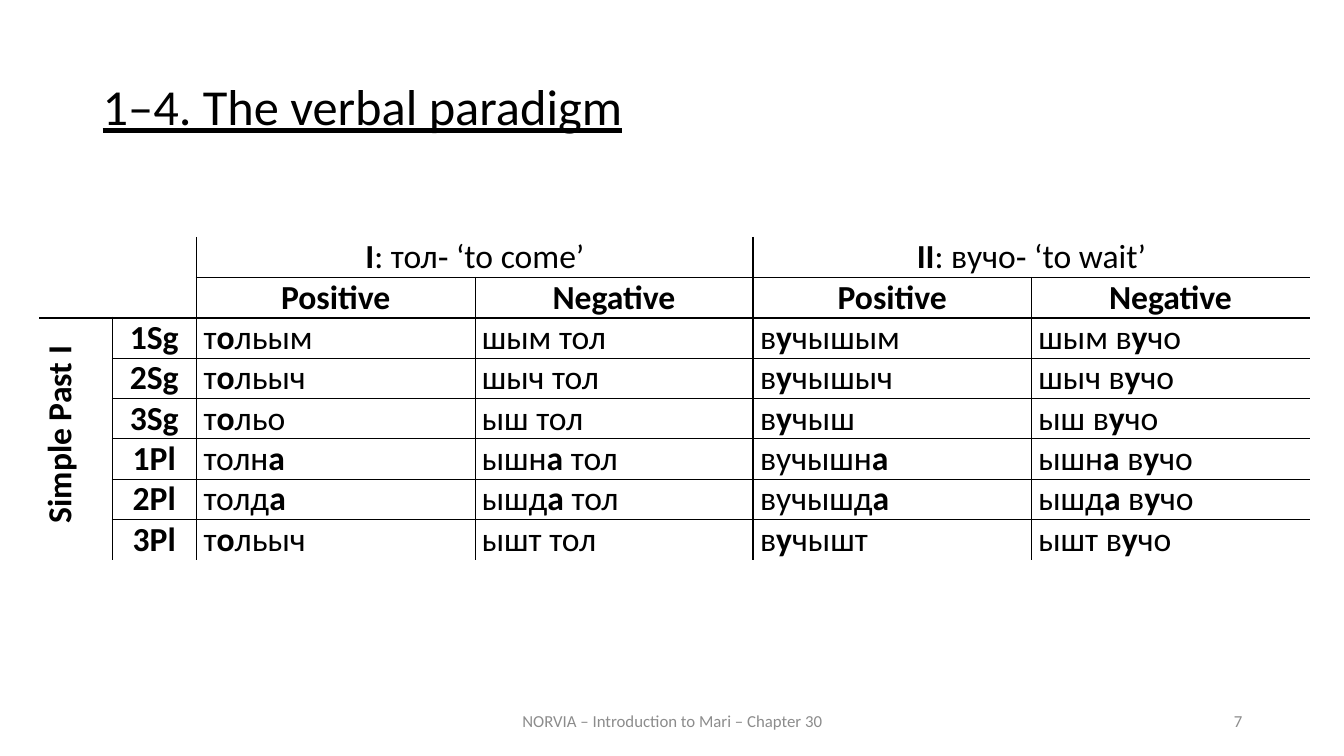
import dataclasses

import pptx
import pptx.dml.color
import pptx.enum.text
import pptx.oxml.ns
import pptx.util
from lxml import etree

ALIGN = pptx.enum.text.PP_ALIGN
ANCHOR = pptx.enum.text.MSO_ANCHOR
INCH = pptx.util.Inches


@dataclasses.dataclass(frozen=True)
class Theme:
    font: str = "Calibri"
    ink: str = "000000"
    muted: str = "8C8C8C"
    title_size: float = 36
    table_size: float = 24
    footer_size: float = 12
    thin: float = 0.5
    thick: float = 1.5


THEME = Theme()
SLIDE_WIDTH, SLIDE_HEIGHT = 13.33, 7.5

COLUMN_WIDTHS = [0.72, 0.84] + [2.76] * 4
ROW_HEIGHT = 0.4
CONJUGATIONS = ["*I*: тол‑ ‘to come’", "*II*: вучо‑ ‘to wait’"]
POLARITIES = ["*Positive*", "*Negative*"]
TENSE = "*Simple Past I*"
FORMS = [
    ["*1Sg*", "т*о*льым", "шым тол", "в*у*чышым", "шым в*у*чо"],
    ["*2Sg*", "т*о*льыч", "шыч тол", "в*у*чышыч", "шыч в*у*чо"],
    ["*3Sg*", "т*о*льо", "ыш тол", "в*у*чыш", "ыш в*у*чо"],
    ["*1Pl*", "толн*а*", "ышн*а* тол", "вучышн*а*", "ышн*а* в*у*чо"],
    ["*2Pl*", "толд*а*", "ышд*а* тол", "вучышд*а*", "ышд*а* в*у*чо"],
    ["*3Pl*", "т*о*льыч", "ышт тол", "в*у*чышт", "ышт в*у*чо"],
]
HEADER_ROWS = 2
LABEL_COLUMNS = 2


def write(paragraph, marked, size, color, align, underline=None):
    paragraph.alignment = align
    for index, piece in enumerate(marked.split("*")):
        if piece:
            run = paragraph.add_run()
            run.text = piece
            run.font.name = THEME.font
            run.font.size = pptx.util.Pt(size)
            run.font.bold = index % 2 == 1
            run.font.underline = underline
            run.font.color.rgb = pptx.dml.color.RGBColor.from_string(color)


def add_text(slide, box, text, size, color, align, anchor, underline=None):
    frame = slide.shapes.add_textbox(*map(INCH, box)).text_frame
    frame.word_wrap = True
    frame.vertical_anchor = anchor
    write(frame.paragraphs[0], text, size, color, align, underline)
    return frame.paragraphs[0]


def add_title(slide, box):
    heading = add_text(slide, box, "1–4. The verbal paradigm", THEME.title_size,
                       THEME.ink, ALIGN.JUSTIFY, ANCHOR.TOP, True)
    heading.line_spacing = 0.9
    heading.space_before = pptx.util.Pt(12)


def add_footer(slide, box):
    left, top, width, height = box
    number_width = 3
    add_text(slide, (left, top, 4.5, height), "NORVIA – Introduction to Mari – Chapter 30",
             THEME.footer_size, THEME.muted, ALIGN.CENTER, ANCHOR.MIDDLE)
    add_text(slide, (left + width - number_width, top, number_width, height), "7",
             THEME.footer_size, THEME.muted, ALIGN.RIGHT, ANCHOR.MIDDLE)


def vertical_rule(edge, row):
    if edge in (2, 4):
        return THEME.thick
    first_row = {1: HEADER_ROWS, 3: 1, 5: 1}.get(edge)
    return THEME.thin if first_row is not None and row >= first_row else 0


def horizontal_rule(edge, column):
    if edge == HEADER_ROWS:
        return THEME.thick
    if edge in (0, HEADER_ROWS + len(FORMS)):
        return 0
    first_column = LABEL_COLUMNS if edge < HEADER_ROWS else 1
    return THEME.thin if column >= first_column else 0


def draw_border(cell, side, weight):
    qn = pptx.oxml.ns.qn
    line = etree.SubElement(cell._tc.get_or_add_tcPr(), qn("a:ln" + side))
    line.set("w", str(int(pptx.util.Pt(weight))))
    if weight:
        ink = etree.SubElement(line, qn("a:solidFill"))
        etree.SubElement(ink, qn("a:srgbClr")).set("val", THEME.ink)
    else:
        etree.SubElement(line, qn("a:noFill"))


def style_cell(cell, row, column):
    right = column + (cell.span_width if cell.is_merge_origin else 1)
    bottom = row + (cell.span_height if cell.is_merge_origin else 1)
    draw_border(cell, "L", vertical_rule(column, row))
    draw_border(cell, "R", vertical_rule(right, row))
    draw_border(cell, "T", horizontal_rule(row, column))
    draw_border(cell, "B", horizontal_rule(bottom, column))
    cell.fill.background()
    cell.margin_left = cell.margin_right = INCH(0.07)
    cell.margin_top = cell.margin_bottom = 0


def add_paradigm(slide, box):
    row_count = HEADER_ROWS + len(FORMS)
    table = slide.shapes.add_table(row_count, len(COLUMN_WIDTHS), *map(INCH, box)).table
    table.first_row = table.horz_banding = False
    for column, width in zip(table.columns, COLUMN_WIDTHS):
        column.width = INCH(width)
    for row in table.rows:
        row.height = INCH(ROW_HEIGHT)

    def fill_cell(row, column, marked, align=ALIGN.CENTER):
        write(table.cell(row, column).text_frame.paragraphs[0], marked,
              THEME.table_size, THEME.ink, align)

    for index, conjugation in enumerate(CONJUGATIONS):
        start = LABEL_COLUMNS + index * len(POLARITIES)
        table.cell(0, start).merge(table.cell(0, start + len(POLARITIES) - 1))
        fill_cell(0, start, conjugation)
        for offset, polarity in enumerate(POLARITIES):
            fill_cell(1, start + offset, polarity)

    tense = table.cell(HEADER_ROWS, 0)
    tense.merge(table.cell(row_count - 1, 0))
    fill_cell(HEADER_ROWS, 0, TENSE)
    tense._tc.get_or_add_tcPr().set("vert", "vert270")
    tense.text_frame.paragraphs[0]._p.get_or_add_pPr().set("marL", str(int(INCH(0.08))))

    for row, forms in enumerate(FORMS, HEADER_ROWS):
        for column, form in enumerate(forms, 1):
            fill_cell(row, column, form, ALIGN.CENTER if column == 1 else ALIGN.JUSTIFY)

    for row in range(row_count):
        for column in range(len(COLUMN_WIDTHS)):
            style_cell(table.cell(row, column), row, column)


def main():
    deck = pptx.Presentation()
    deck.slide_width, deck.slide_height = INCH(SLIDE_WIDTH), INCH(SLIDE_HEIGHT)
    slide = deck.slides.add_slide(deck.slide_layouts[6])
    add_title(slide, (0.92, 0.76, 11.5, 0.83))
    add_footer(slide, (4.42, 6.95, 8, 0.4))
    add_paradigm(slide, (0.39, 2.35, sum(COLUMN_WIDTHS), ROW_HEIGHT * (HEADER_ROWS + len(FORMS))))
    deck.save("out.pptx")


if __name__ == "__main__":
    main()
